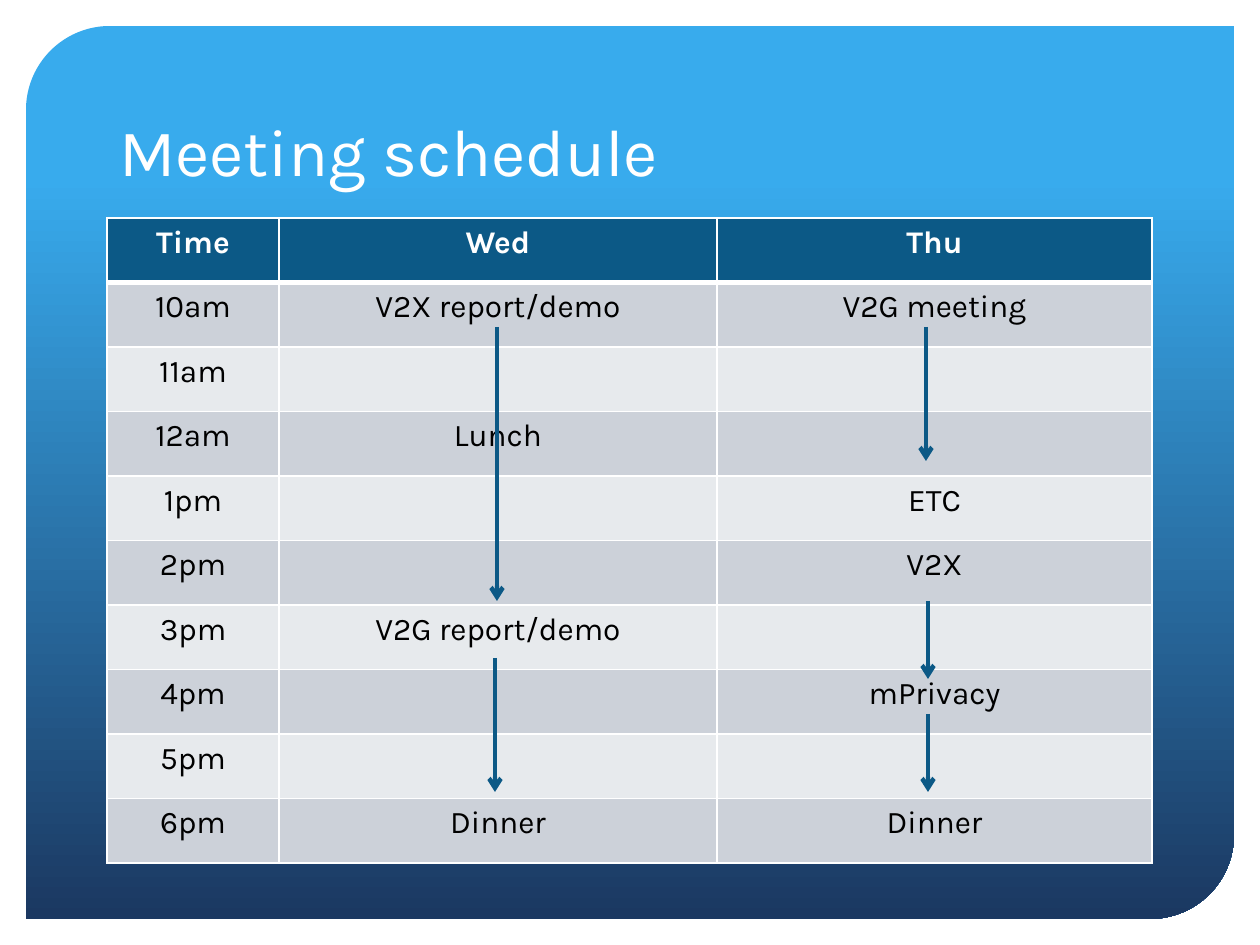
"""Build the meeting schedule slide with its two-day timetable."""
from lxml import etree
from pptx import Presentation
from pptx import util as u
from pptx.dml.color import RGBColor
from pptx.enum import shapes, text
from pptx.oxml.ns import qn

THEME = {
    "font": "Karla", "title_size": 38, "cell_size": 18,
    "white": "FFFFFF", "black": "000000", "accent": "0C5986",
    "bands": ("E7EAED", "CCD1D9"),
    "gradient": ((0.17, "38ABED"), (1, "1B3861")),
}


def px(n):
    return u.Emu(round(n * 914400 / 126))


def write(tf, words, align, size, color, bold=False):
    p = tf.paragraphs[0]
    p.alignment = align
    r = p.add_run()
    r.text = words
    fmt = {"name": THEME["font"], "size": u.Pt(size), "bold": bold}
    for key, value in fmt.items():
        setattr(r.font, key, value)
    r.font.color.rgb = RGBColor.from_string(color)


prs = Presentation()
prs.slide_width, prs.slide_height = px(1260), px(945)
s = prs.slides.add_slide(prs.slide_layouts[6])

panel = s.shapes.add_shape(
    shapes.MSO_SHAPE.ROUND_2_DIAG_RECTANGLE, px(26), px(26), px(1208), px(893))
panel.shadow.inherit = False
panel.adjustments[0], panel.adjustments[1] = 0.094, 0
panel.line.fill.background()
panel.fill.gradient()
panel.fill.gradient_angle = 270
for stop, (position, color) in zip(panel.fill.gradient_stops, THEME["gradient"]):
    stop.position = position
    stop.color.rgb = RGBColor.from_string(color)

title = s.shapes.add_textbox(px(107), px(53), px(1045), px(143))
tf = title.text_frame
for key, value in {"word_wrap": True, "vertical_anchor": text.MSO_ANCHOR.BOTTOM}.items():
    setattr(tf, key, value)
write(tf, "Meeting schedule", text.PP_ALIGN.LEFT, THEME["title_size"], THEME["white"])

SCHEDULE = [
    ("Time", "Wed", "Thu"),
    ("10am", "V2X report/demo", "V2G meeting"),
    ("11am", "", ""),
    ("12am", "Lunch", ""),
    ("1pm", "", "ETC"),
    ("2pm", "", "V2X"),
    ("3pm", "V2G report/demo", ""),
    ("4pm", "", "mPrivacy"),
    ("5pm", "", ""),
    ("6pm", "Dinner", "Dinner"),
]
table = s.shapes.add_table(
    len(SCHEDULE), 3, px(107), px(218), px(1045), px(645)).table
for column, width in zip(table.columns, (172, 438, 435)):
    column.width = px(width)
for i, row in enumerate(SCHEDULE):
    table.rows[i].height = px(645) // len(SCHEDULE)
    header = i == 0
    for j, words in enumerate(row):
        cell = table.cell(i, j)
        cell.fill.solid()
        cell.fill.fore_color.rgb = RGBColor.from_string(
            THEME["accent"] if header else THEME["bands"][i % 2])
        write(cell.text_frame, words, text.PP_ALIGN.CENTER, THEME["cell_size"],
              THEME["white"] if header else THEME["black"], header)
        borders = {"lnL": 1, "lnR": 1, "lnT": 3 if i == 1 else 1, "lnB": 3 if header else 1}
        for k, (side, width) in enumerate(borders.items()):
            ln = etree.Element(qn(f"a:{side}"), w=str(u.Pt(width)))
            fill = etree.SubElement(ln, qn("a:solidFill"))
            etree.SubElement(fill, qn("a:srgbClr"), val=THEME["white"])
            cell._tc.get_or_add_tcPr().insert(k, ln)

ARROWS = [(497, 327, 601), (495, 658, 792), (926, 327, 461), (928, 601, 679), (928, 714, 792)]
for x, top, bottom in ARROWS:
    arrow = s.shapes.add_connector(
        shapes.MSO_CONNECTOR.STRAIGHT, px(x), px(top), px(x), px(bottom))
    arrow.line.width = u.Pt(2.5)
    arrow.line.color.rgb = RGBColor.from_string(THEME["accent"])
    etree.SubElement(arrow.line._get_or_add_ln(), qn("a:tailEnd"), type="arrow")
    etree.SubElement(arrow._element.spPr, qn("a:effectLst"))

prs.save("out.pptx")
